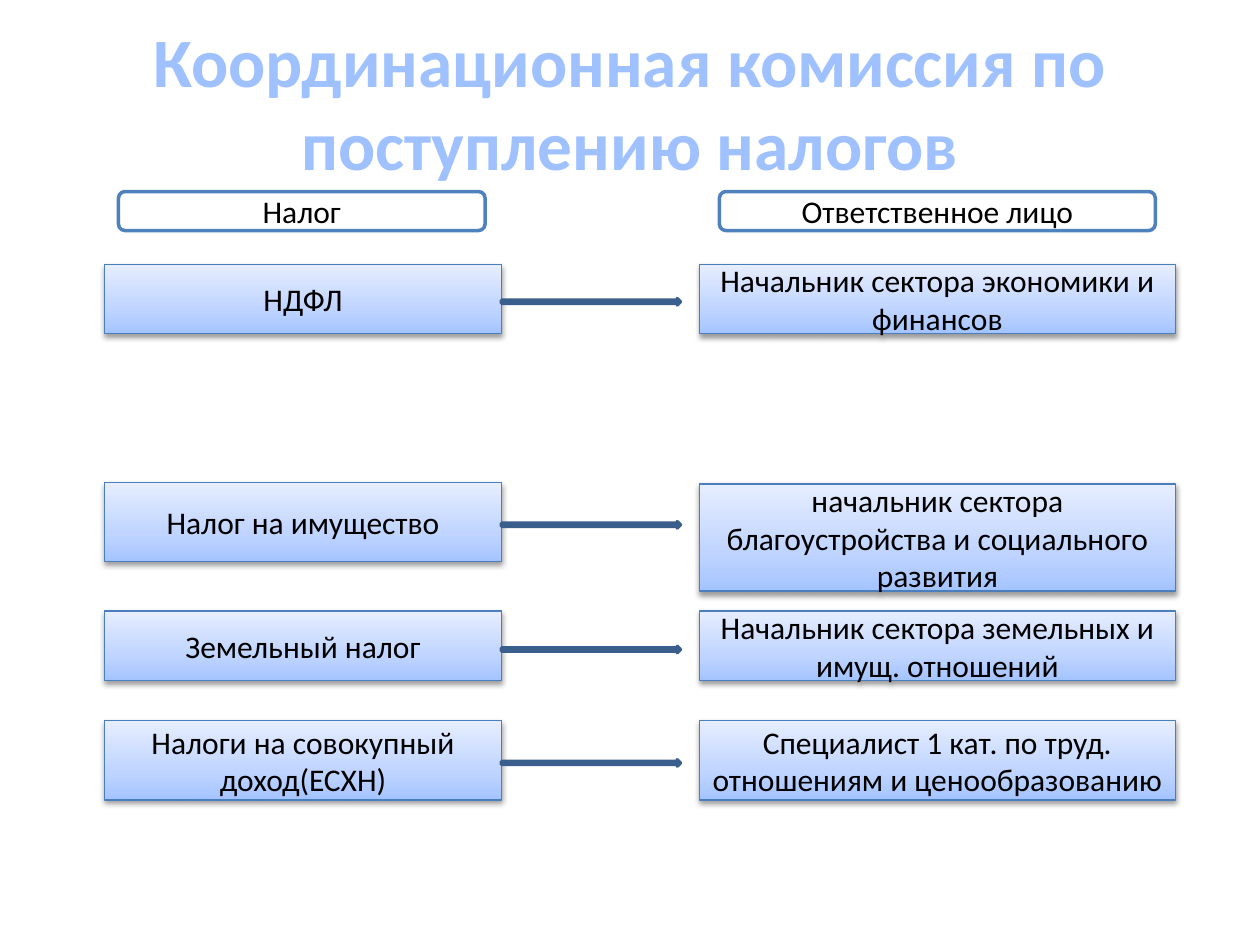
from copy import deepcopy

from lxml.etree import SubElement
from pptx import Presentation
from pptx.dml.color import RGBColor
from pptx.enum.shapes import MSO_SHAPE as Shape
from pptx.enum.text import MSO_ANCHOR as Anchor, MSO_AUTO_SIZE as AutoSize, PP_ALIGN as Align
from pptx.oxml.ns import qn
from pptx.util import Inches, Pt


def color(value):
    return RGBColor.from_string(value)


def write(shape, text, size, text_color, bold=False):
    frame = shape.text_frame
    frame_format = {"word_wrap": True, "auto_size": AutoSize.NONE,
                    "vertical_anchor": Anchor.MIDDLE}
    for name, value in frame_format.items():
        setattr(frame, name, value)
    para = frame.paragraphs[0]
    para.alignment = Align.CENTER
    span = para.add_run()
    span.text = text
    for name, value in {"name": "Calibri", "size": Pt(size), "bold": bold}.items():
        setattr(span.font, name, value)
    span.font.color.rgb = color(text_color)


deck = Presentation()
deck.slide_width, deck.slide_height = Inches(10), Inches(7.5)
page = deck.slides.add_slide(deck.slide_layouts[5])

# Title
title = page.shapes.title
title_place = {"left": 0.5, "top": 0.3, "width": 9, "height": 1.01}
for name, value in title_place.items():
    setattr(title, name, Inches(value))
write(title, "Координационная комиссия по поступлению налогов", 39.6, "A0C1FF", True)

# Column headings
for left, width, text in [(0.94, 2.91, "Налог"), (5.71, 3.46, "Ответственное лицо")]:
    heading = page.shapes.add_shape(Shape.ROUNDED_RECTANGLE, Inches(left), Inches(1.52),
                                    Inches(width), Inches(0.31))
    heading.shadow.inherit = False
    heading.fill.solid()
    heading.fill.fore_color.rgb = color("FFFFFF")
    heading.line.color.rgb = color("4F81BD")
    heading.line.width = Pt(2)
    write(heading, text, 18, "000000")

# Rows: tax (top, height, text), person (top, height, text), arrow top
rows = [
    ((2.1, 0.55, "НДФЛ"),
     (2.1, 0.55, "Начальник сектора экономики и финансов"), 2.37),
    ((3.83, 0.63, "Налог на имущество"),
     (3.84, 0.85, "начальник сектора благоустройства и социального развития"), 4.14),
    ((4.85, 0.55, "Земельный налог"),
     (4.85, 0.55, "Начальник сектора земельных и имущ. отношений"), 5.13),
    ((5.72, 0.63, "Налоги на совокупный доход(ЕСХН)"),
     (5.72, 0.63, "Специалист 1 кат. по труд. отношениям и ценообразованию"), 6.03),
]
columns = [(0.83, 3.15), (5.55, 3.78)]
gradient = [(0, "A4C4FF"), (0.35, "BFD4FF"), (1, "E6EEFF")]

for *cells, arrow_top in rows:
    for (left, width), (top, height, text) in zip(columns, cells):
        box = page.shapes.add_shape(Shape.RECTANGLE, Inches(left), Inches(top),
                                    Inches(width), Inches(height))
        # Three-stop gradient, darkest at the bottom
        box.fill.gradient()
        box.fill.gradient_angle = 90
        properties = box.element.spPr
        stops = properties.find(qn("a:gradFill")).find(qn("a:gsLst"))
        stops.append(deepcopy(stops[0]))
        for stop, (position, value) in zip(box.fill.gradient_stops, gradient):
            stop.position = position
            stop.color.rgb = color(value)
        box.line.color.rgb = color("4B7EBC")
        box.line.width = Pt(0.75)
        # Soft shadow below
        box.shadow.inherit = False
        shadow = SubElement(properties.find(qn("a:effectLst")), qn("a:outerShdw"),
                            blurRad=str(Pt(3.1)), dist=str(Pt(1.6)),
                            dir="5400000", rotWithShape="0")
        tint = SubElement(shadow, qn("a:srgbClr"), val="000000")
        SubElement(tint, qn("a:alpha"), val="38000")
        write(box, text, 18, "000000")

    # Arrow from the tax to the person
    arrow = page.shapes.add_shape(Shape.RIGHT_ARROW, Inches(3.98), Inches(arrow_top),
                                  Inches(1.42), Inches(0.05))
    arrow.shadow.inherit = False
    arrow.fill.solid()
    arrow.fill.fore_color.rgb = color("4F81BD")
    arrow.line.color.rgb = color("3A5F8C")
    arrow.line.width = Pt(2)

deck.save("out.pptx")
